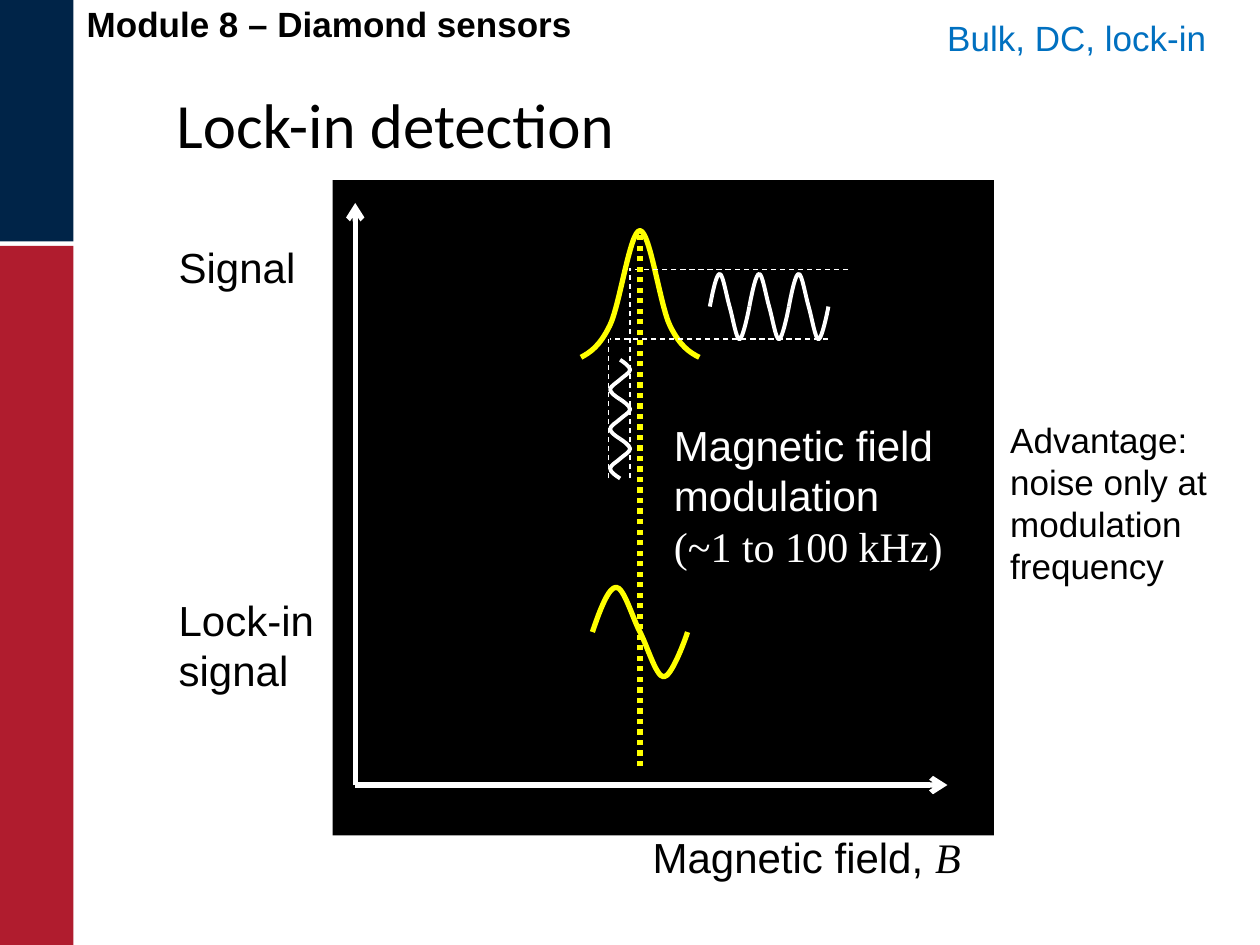
from lxml.etree import SubElement
from pptx import Presentation
from pptx.dml.color import RGBColor as Rgb
from pptx.enum.dml import MSO_LINE as Dash
from pptx.enum.shapes import MSO_CONNECTOR as Link, MSO_SHAPE as Shape
from pptx.enum.text import MSO_ANCHOR as Anchor, PP_ALIGN as Align
from pptx.oxml.ns import qn
from pptx.util import Pt

HUES = {"navy": "002448", "red": "B01C2E", "black": "000000",
        "white": "FFFFFF", "gold": "FFFF00", "blue": "0070C0"}
SANS = {"name": "Arial"}
SERIF = {"name": "Times New Roman"}
WAVE = [(0, 0), (0.08, 0.5), (0.17, 1), (0.25, 1), (0.33, 1), (0.42, 0.33), (0.5, 0),
        (0.58, -0.33), (0.67, -1), (0.75, -1), (0.83, -1), (0.97, -0.2), (1, 0)]
PEAK = [(332, 204.2), (337.3, 201.4), (342.7, 197.8), (348.4, 186.2),
        (354.2, 174.6), (360, 131.8), (365.7, 131.8), (371.4, 131.8),
        (377.2, 174.6), (382.9, 186.2), (388.6, 197.8), (394, 201.4), (399.6, 204.2)]
MID = 365.7
STEP = 22.6


def paint(hue):
    return Rgb.from_string(HUES[hue])


def style(item, values):
    for key, value in values.items():
        setattr(item, key, value)


def write(frame, paras, size, hue, wrap=True):
    style(frame, {"word_wrap": wrap, "vertical_anchor": Anchor.TOP})
    for at, runs in enumerate(paras):
        para = frame.paragraphs[0] if at == 0 else frame.add_paragraph()
        para.alignment = Align.LEFT
        for words, look in runs:
            run = para.add_run()
            run.text = words
            style(run.font, {"size": Pt(size), **look})
            run.font.color.rgb = paint(hue)


def label(slide, box, paras, size=24, hue="black", wrap=True):
    shape = slide.shapes.add_textbox(*map(Pt, box))
    write(shape.text_frame, paras, size, hue, wrap)
    return shape.text_frame


def block(slide, box, hue):
    shape = slide.shapes.add_shape(Shape.RECTANGLE, *map(Pt, box))
    shape.shadow.inherit = False
    shape.fill.solid()
    shape.fill.fore_color.rgb = paint(hue)
    shape.line.fill.background()


def stroke(line, hue, width, dash=None):
    line.color.rgb = paint(hue)
    style(line, {"width": Pt(width), "dash_style": dash})


def rule(slide, ends, hue="white", width=0.75, dash=Dash.DASH, arrow=False):
    link = slide.shapes.add_connector(Link.STRAIGHT, *map(Pt, ends))
    stroke(link.line, hue, width, dash)
    if arrow:
        SubElement(link.line._get_or_add_ln(), qn("a:tailEnd"), type="arrow")
    SubElement(link._element.spPr, qn("a:effectLst"))


def curve(slide, points, hue, width):
    first, *rest = [(Pt(x), Pt(y)) for x, y in points]
    pen = slide.shapes.build_freeform(*first)
    pen.add_line_segments(rest, close=False)
    shape = pen.convert_to_shape()
    legs = list(shape._element.iter(qn("a:lnTo")))
    for at in range(0, len(legs), 3):
        head, *tail = legs[at:at + 3]
        for leg in tail:
            head.append(leg[0])
            leg.getparent().remove(leg)
        head.tag = qn("a:cubicBezTo")
    shape.shadow.inherit = False
    shape.fill.background()
    stroke(shape.line, hue, width)


def across(left, mid, span, high):
    return [(left + t * span, mid - a * high) for t, a in WAVE]


def upward(mid, base, span, high):
    return [(mid - a * high, base - t * span) for t, a in WAVE]


def main():
    deck = Presentation()
    style(deck, {"slide_width": Pt(720), "slide_height": Pt(540)})
    slide = deck.slides.add_slide(deck.slide_layouts[5])

    block(slide, (0, 0, 42, 138), "navy")
    block(slide, (0, 140.5, 42, 399.5), "red")
    label(slide, (42.5, -2, 618, 72),
          [[("Module 8 – Diamond sensors", {**SANS, "bold": True})]], 20)

    title = slide.shapes.title
    style(title, dict(zip(("left", "top", "width", "height"),
                          map(Pt, (93.6, 38.2, 487.4, 64)))))
    write(title.text_frame, [[("Lock-in detection", {"name": "Calibri"})]], 36, "black")
    title.text_frame.vertical_anchor = Anchor.MIDDLE

    label(slide, (365.8, 471.6, 193.7, 36),
          [[("Magnetic field, ", SANS), ("B", {**SERIF, "italic": True})]], wrap=False)

    block(slide, (190, 103, 378, 374.4), "black")
    for end in ((541.4, 448.6), (203, 116)):
        rule(slide, (203, 448.6, *end), width=3, dash=None, arrow=True)

    curve(slide, PEAK, "gold", 3)
    for turn in range(3):
        shift = turn * STEP
        curve(slide, upward(354.4, 273.4 - shift, STEP, 5.7), "white", 2.25)
        curve(slide, across(405.6, 175.2 + 0, STEP, 18.7) if not turn
              else across(405.6 + shift, 175.2, STEP, 18.7), "white", 2.25)
    for ends in ((347.8, 273.4, 347.8, 193.7), (360, 273.4, 360, 153.4),
                 (484.6, 154.1, 360, 154.1), (473, 193.7, 348.5, 193.7)):
        rule(slide, ends)

    label(slide, (378, 236.2, 193, 94.3),
          [[("Magnetic field modulation", SANS)], [("(~1 to 100 kHz)", SERIF)]], hue="white")
    curve(slide, across(338.5, 361.2, 54.4, 25.6), "gold", 3)
    rule(slide, (MID, 437.8, MID, 131.8), "gold", 3, Dash.ROUND_DOT)

    label(slide, (570.2, 235.4, 141, 104.4),
          [[("Advantage: noise only at", SANS)], [("modulation frequency", SANS)]], 20)
    side = label(slide, (95, 134.6, 134, 269.3),
                 [[("Signal", SANS)], [("Lock-in signal", SANS)]])
    side.paragraphs[1].space_before = Pt(172.8)
    label(slide, (534.2, 5.8, 164, 31.7),
          [[("Bulk, DC, lock-in", SANS)]], 20, "blue", False)
    deck.save("out.pptx")


if __name__ == "__main__":
    main()
